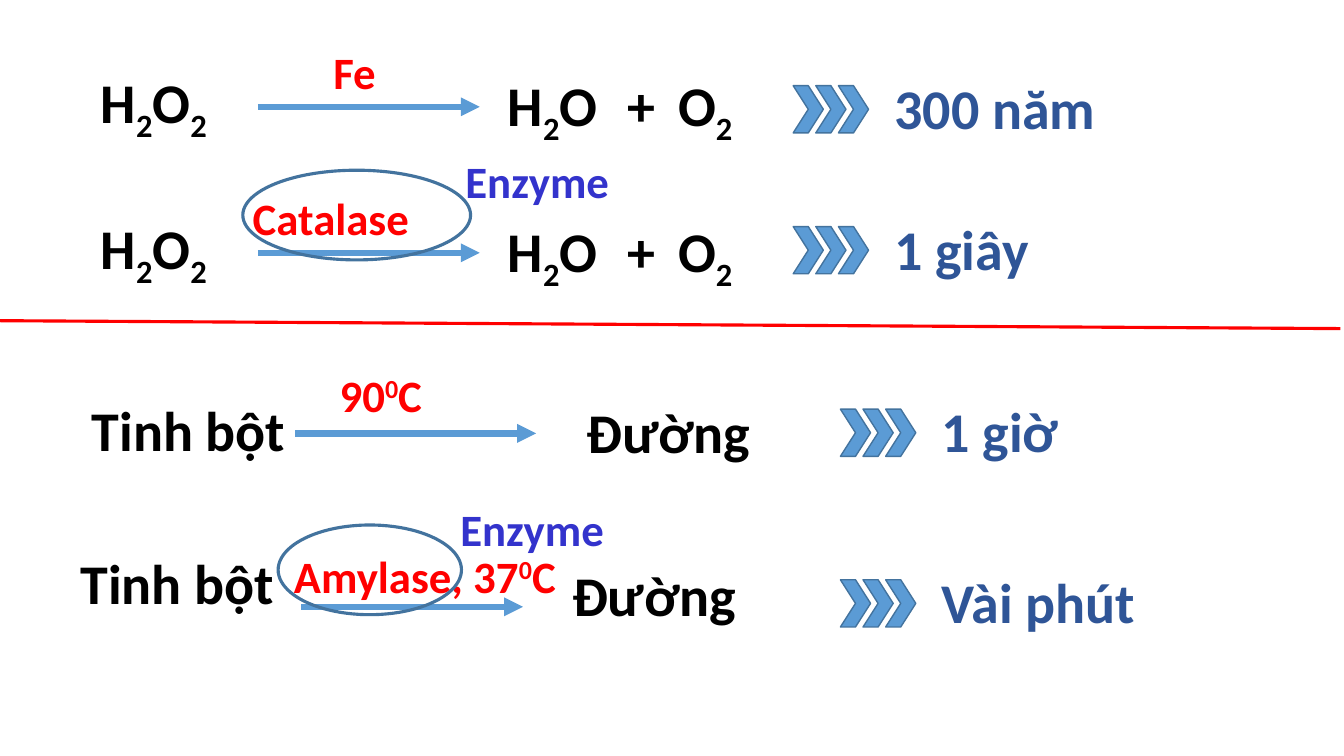
import pptx
import pptx.util
import pptx.dml.color
import pptx.enum.shapes
import pptx.enum.text
from dataclasses import dataclass
from lxml import etree

Cm = pptx.util.Cm
SHAPE = pptx.enum.shapes.MSO_SHAPE


@dataclass
class Theme:
    font: str = "Calibri"
    black: str = "000000"
    red: str = "FF0000"
    blue: str = "5B9BD5"
    edge: str = "43739E"
    navy: str = "2F5597"
    violet: str = "3333CC"
    large: int = 40
    small: int = 32


def color(code):
    return pptx.dml.color.RGBColor.from_string(code)


def assign(target, values):
    for name, value in values.items():
        setattr(target, name, value)


class Board:
    def __init__(self, slide, theme):
        self.slide, self.theme = slide, theme

    def text(self, x, y, width, words, tint, size):
        """In words, _ lowers and ^ raises the next letter."""
        height = 1.96 if size == self.theme.large else 1.63
        box = self.slide.shapes.add_textbox(Cm(x), Cm(y), Cm(width), Cm(height))
        assign(box.text_frame, {
            "word_wrap": True,
            "auto_size": pptx.enum.text.MSO_AUTO_SIZE.SHAPE_TO_FIT_TEXT,
        })
        para = box.text_frame.paragraphs[0]
        for part, shift in self.split(words):
            run = para.add_run()
            run.text = part
            assign(run.font, {"name": self.theme.font, "bold": True,
                              "size": pptx.util.Pt(size)})
            run.font.color.rgb = color(tint)
            if shift:
                run.font._element.set("baseline", str(shift))

    def split(self, words):
        shifts = {"_": -25000, "^": 30000}
        parts, plain, marks = [], "", iter(words)
        for mark in marks:
            if mark in shifts:
                parts += [(plain, 0), (next(marks), shifts[mark])]
                plain = ""
            else:
                plain += mark
        return [part for part in parts + [(plain, 0)] if part[0]]

    def line(self, start, end, tint, weight, arrow=False):
        line = self.slide.shapes.add_connector(
            pptx.enum.shapes.MSO_CONNECTOR.STRAIGHT,
            *(Cm(v) for v in (*start, *end)))
        line.line.color.rgb = color(tint)
        line.line.width = pptx.util.Pt(weight)
        if arrow:
            tail = pptx.oxml.ns.qn("a:tailEnd")
            etree.SubElement(line.line._get_or_add_ln(), tail, type="triangle")
        etree.SubElement(line._element.spPr, pptx.oxml.ns.qn("a:effectLst"))

    def shape(self, kind, x, y, width, height, weight, fill=None):
        shape = self.slide.shapes.add_shape(
            kind, Cm(x), Cm(y), Cm(width), Cm(height))
        shape.shadow.inherit = False
        if fill:
            shape.fill.solid()
            shape.fill.fore_color.rgb = color(fill)
        else:
            shape.fill.background()
        shape.line.color.rgb = color(self.theme.edge)
        shape.line.width = pptx.util.Pt(weight)

    def arrow(self, left, right, y):
        self.line((left, y), (right, y), self.theme.blue, 4.5, arrow=True)

    def term(self, x, y, width, words):
        self.text(x, y, width, words, self.theme.black, self.theme.large)

    def agent(self, x, y, width, words):
        self.text(x, y, width, words, self.theme.red, self.theme.small)

    def time(self, x, y, width, words):
        for i in range(3):
            self.shape(SHAPE.CHEVRON, x + 0.57 * i, y, 0.76, 1.19, 1,
                       self.theme.blue)
        self.text(x + 2.3, y - 0.44, width, words,
                  self.theme.navy, self.theme.large)

    def enzyme(self, x, y):
        self.text(x, y, 5.18, "Enzyme", self.theme.violet, self.theme.small)

    def ring(self, x, y, width):
        self.shape(SHAPE.OVAL, x, y, width, 2.26, 2.25)


def main():
    deck = pptx.Presentation()
    assign(deck, {"slide_width": Cm(33.87), "slide_height": Cm(19.05)})
    theme = Theme()
    board = Board(deck.slides.add_slide(deck.slide_layouts[6]), theme)

    # Peroxide reactions
    for drop in (0, 3.68):
        board.term(2.29, 1.57 + drop, 3.76, "H_2O_2")
        board.arrow(6.5, 12.09, 2.69 + drop)
        for x, width, words in ((12.55, 3.76, "H_2O"), (15.57, 1.27, "+"),
                                (16.84, 2.49, "O_2")):
            board.term(x, 1.65 + drop, width, words)
    board.agent(8.15, 0.99, 3.76, "Fe")
    board.agent(6.12, 4.67, 6.96, "Catalase")

    # Starch reactions
    board.term(2.06, 9.83, 6.22, "Tinh bột")
    board.arrow(7.44, 13.51, 10.92)
    board.term(14.53, 9.88, 5.84, "Đường")
    board.agent(8.31, 9.14, 4.09, "90^0C")
    board.term(1.78, 13.69, 5.94, "Tinh bột")
    board.arrow(7.59, 13.18, 15.29)
    board.term(14.17, 14, 5.38, "Đường")
    board.agent(7.16, 13.69, 8.59, "Amylase, 37^0C")

    # Durations
    for x, y, width, words in ((19.99, 2.16, 6.15, "300 năm"),
                               (19.99, 5.71, 6.15, "1 giây"),
                               (21.18, 10.31, 4.29, "1 giờ"),
                               (21.18, 14.61, 6.15, "Vài phút")):
        board.time(x, y, width, words)

    # Divider and enzyme marks
    board.line((-0.1, 8.08), (33.78, 8.28), theme.red, 2.25)
    board.ring(6.12, 4.29, 5.74)
    board.ring(7.01, 13.23, 4.62)
    board.enzyme(11.48, 3.76)
    board.enzyme(11.35, 12.52)

    deck.save("out.pptx")


if __name__ == "__main__":
    main()
